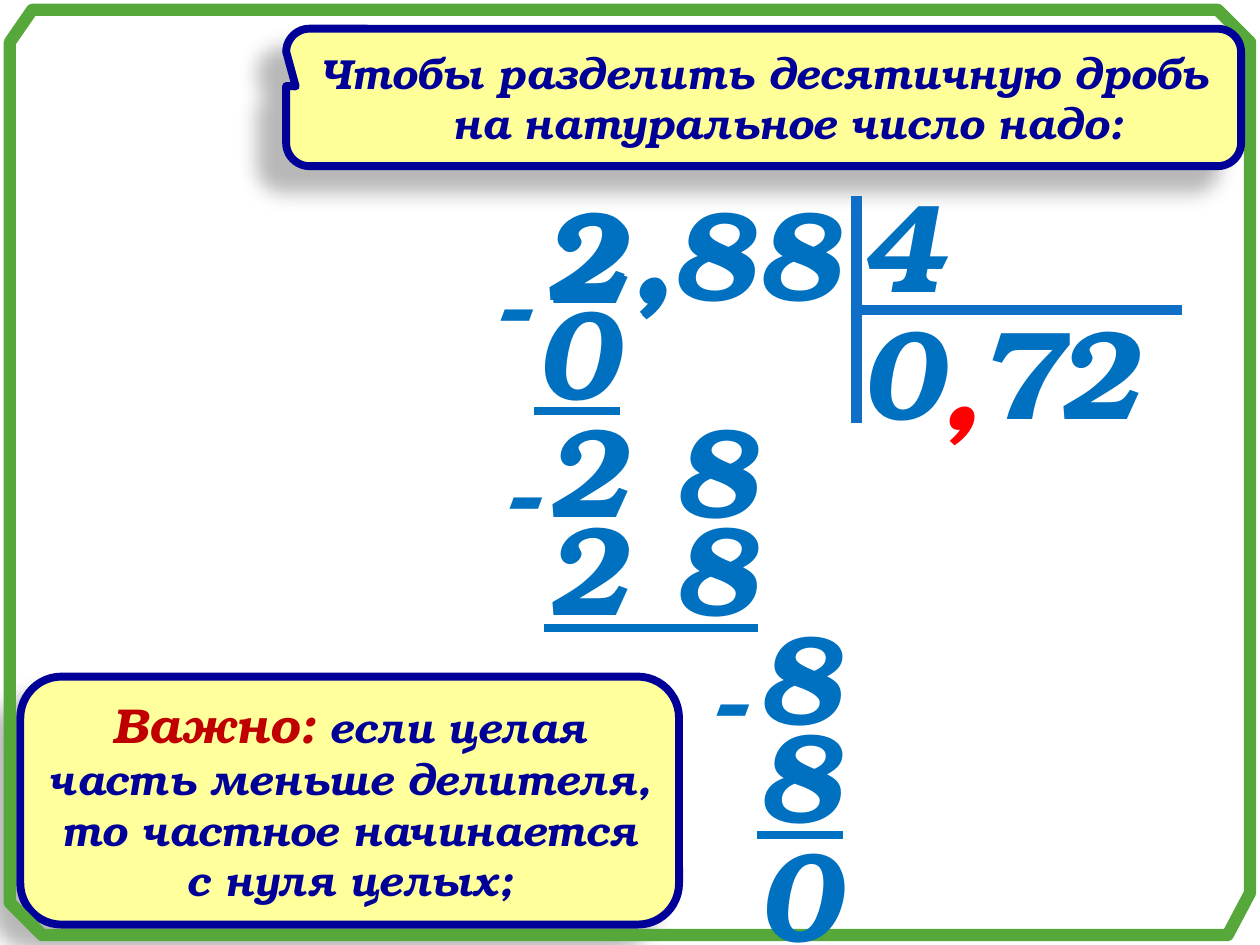
from pptx import Presentation
from pptx.dml.color import RGBColor
from pptx.enum.shapes import MSO_CONNECTOR, MSO_SHAPE
from pptx.enum.text import MSO_ANCHOR, MSO_AUTO_SIZE, PP_ALIGN
from pptx.oxml.ns import qn
from pptx.util import Cm, Pt
from lxml.etree import SubElement

COLORS = {
    "frame": "55A839", "navy": "000099", "yellow": "FFFF9B", "pale": "FFFF99",
    "digit": "0070C0", "rule": "0F6FC6", "comma": "FF0000", "warning": "C00000",
    "shadow": "000000",
}
DIGIT_HEIGHT = 3.33


def rgb(name):
    return RGBColor.from_string(COLORS[name])


class Board:
    """Holds the slide and its style; all lengths are in centimetres."""

    font = "TeX Gyre Bonum"

    def __init__(self, slide):
        self.shapes = slide.shapes

    def style_run(self, r, size, color, underline=None):
        r.font.name = self.font
        r.font.size = Pt(size)
        r.font.bold = r.font.italic = True
        r.font.underline = underline
        r.font.color.rgb = rgb(color)

    def add_frame(self, points):
        start, *rest = [(Cm(x), Cm(y)) for x, y in points]
        builder = self.shapes.build_freeform(*start)
        builder.add_line_segments(rest, close=True)
        sp = builder.convert_to_shape()
        sp.shadow.inherit = False
        sp.fill.background()
        sp.line.color.rgb = rgb("frame")
        sp.line.width = Pt(7)

    def add_panel(self, kind, box, fill, parts, anchor):
        """Add a shadowed panel; parts are (text, size, color) runs."""
        sp = self.shapes.add_shape(kind, *map(Cm, box))
        sp.fill.solid()
        sp.fill.fore_color.rgb = rgb(fill)
        sp.line.color.rgb = rgb("navy")
        sp.line.width = Pt(4.5)
        self.add_shadow(sp)
        tf = sp.text_frame
        tf.word_wrap = True
        tf.vertical_anchor = anchor
        p = tf.paragraphs[0]
        p.alignment = PP_ALIGN.CENTER
        for text, size, color in parts:
            r = p.add_run()
            r.text = text
            self.style_run(r, size, color)
        return sp

    def add_shadow(self, sp):
        sp.shadow.inherit = False
        effects = sp._element.spPr.find(qn("a:effectLst"))
        shadow = SubElement(effects, qn("a:outerShdw"), blurRad=str(Pt(11.8)),
                            dist=str(Pt(19.7)), dir=str(141 * 60000),
                            algn="ctr", rotWithShape="0")
        clr = SubElement(shadow, qn("a:srgbClr"), val=COLORS["shadow"])
        SubElement(clr, qn("a:alpha"), val="28000")

    def add_digits(self, text, x, y, width, underline=None, color="digit", wrap=True):
        sp = self.shapes.add_textbox(Cm(x), Cm(y), Cm(width), Cm(DIGIT_HEIGHT))
        tf = sp.text_frame
        tf.word_wrap = wrap
        tf.auto_size = MSO_AUTO_SIZE.SHAPE_TO_FIT_TEXT
        tf.text = text
        self.style_run(tf.paragraphs[0].runs[0], 72, color, underline)

    def add_rule(self, x1, y1, x2, y2):
        line = self.shapes.add_connector(MSO_CONNECTOR.STRAIGHT, *map(Cm, (x1, y1, x2, y2)))
        line.line.color.rgb = rgb("rule")
        line.line.width = Pt(6)
        SubElement(line._element.spPr, qn("a:effectLst"))


def main():
    prs = Presentation()
    prs.slide_width, prs.slide_height = Cm(25.4), Cm(19.05)
    board = Board(prs.slides.add_slide(prs.slide_layouts[6]))

    board.add_panel(
        MSO_SHAPE.ROUNDED_RECTANGLE, (0.41, 13.64, 13.28, 5), "yellow",
        [("Важно:", 28, "warning"), (" ", 24, "warning"),
         ("если целая часть меньше делителя, то частное начинается с нуля целых;",
          24, "navy")],
        MSO_ANCHOR.TOP)

    board.add_frame([(0.2, 0.85), (0.2, 18.2), (0.85, 18.85), (24.75, 18.85),
                     (25.2, 18), (25.2, 0.85), (24.55, 0.2), (0.65, 0.2)])

    callout = board.add_panel(
        MSO_SHAPE.ROUNDED_RECTANGULAR_CALLOUT, (5.77, 0.58, 19.25, 2.77), "pale",
        [("Чтобы разделить десятичную дробь на натуральное число надо:", 24, "navy")],
        MSO_ANCHOR.MIDDLE)
    for i, value in enumerate((-0.49, -0.08, 0.17)):
        callout.adjustments[i] = value
    pPr = callout.text_frame.paragraphs[0]._p.get_or_add_pPr()
    pPr.set("marL", str(Cm(0.96)))
    pPr.set("indent", str(-Cm(0.96)))

    # Dividend, divisor and quotient
    corner_x, corner_y = 17.27, 6.25
    quotient_y = 5.79
    board.add_digits("2,88", 10.67, 3.4, 6.78)
    board.add_rule(corner_x, 3.96, corner_x, 8.53)
    board.add_rule(corner_x, corner_y, 23.83, corner_y)
    board.add_digits("4", 17.07, 3.23, 2.59)
    for digit, x in (("0", 17.07), ("7", 19.46), ("2", 21.03)):
        board.add_digits(digit, x, quotient_y, 2.59)
    board.add_digits(",", 18.64, 5.99, 2.84, color="comma")

    # Steps of the long division
    steps = [
        ("0", 10.52, 5.38, 4.17, True),
        ("2 8", 10.72, 7.77, 4.95, None),
        ("2 8", 10.72, 9.75, 5.36, True),
        ("8", 15.01, 11.94, 2.84, None),
        ("8", 15.01, 13.92, 2.84, True),
        ("0", 15.01, 16.31, 2.84, None),
    ]
    for step in steps:
        board.add_digits(*step)
    for x, y in ((9.7, 4.39), (9.88, 8.18), (14.05, 12.34)):
        board.add_digits("-", x, y, 2.82)
    board.add_digits("2,", 10.72, 3.45, 3.12, wrap=False)

    prs.save("out.pptx")


if __name__ == "__main__":
    main()
